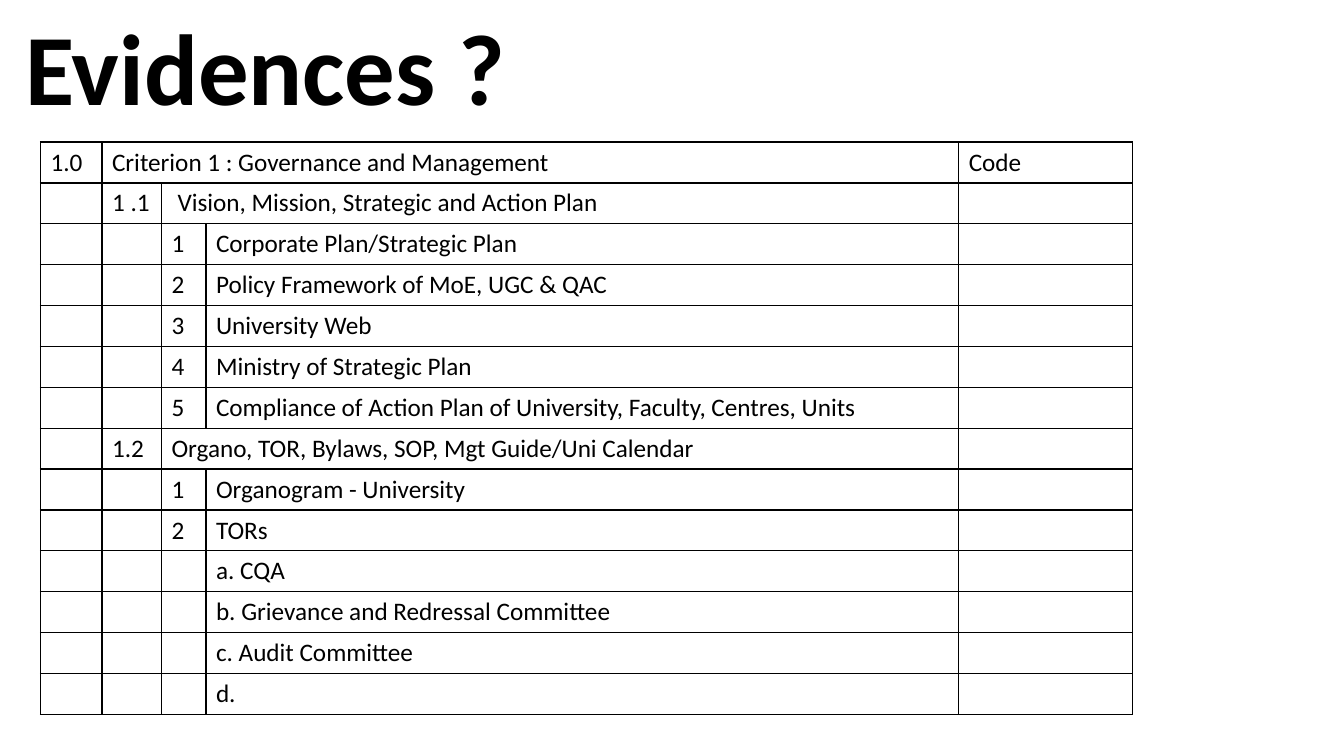
"""Build the evidences slide with its criterion table."""
from dataclasses import dataclass

from lxml import etree
from pptx import Presentation
from pptx.dml.color import RGBColor
from pptx.enum import text
from pptx.oxml import ns
from pptx.util import Cm, Pt


@dataclass(frozen=True)
class Theme:
    """Colours, fonts and type sizes of the slide."""
    ink: str = "000000"
    font: str = "Calibri"
    title: int = 72
    body: int = 18
    rule: int = 1


THEME = Theme()
COLUMNS = (1.55, 1.5, 1.12, 18.97, 4.37)
ROW_HEIGHT = 1.03
LAST_TEXT_COLUMN = 3
ROWS = (
    ("1.0", "Criterion 1 : Governance and Management", "", "", "Code"),
    ("", "1 .1", "Vision, Mission, Strategic and Action Plan"),
    ("", "", "1", "Corporate Plan/Strategic Plan"),
    ("", "", "2", "Policy Framework of MoE, UGC & QAC"),
    ("", "", "3", "University Web"),
    ("", "", "4", "Ministry of Strategic Plan"),
    ("", "", "5", "Compliance of Action Plan of University, Faculty, Centres, Units"),
    ("", "1.2", "Organo, TOR, Bylaws, SOP, Mgt Guide/Uni Calendar"),
    ("", "", "1", "Organogram - University"),
    ("", "", "2", "TORs"),
    ("", "", "", "a. CQA"),
    ("", "", "", "b. Grievance and Redressal Committee"),
    ("", "", "", "c. Audit Committee"),
    ("", "", "", "d."),
)
HEADINGS = {0: 1, 1: 2, 7: 2}
INDENTED_ROW = 1


def style_runs(p, size, bold=False):
    """Apply the theme's font and colour to a paragraph's runs."""
    for r in p.runs:
        r.font.name = THEME.font
        r.font.size = Pt(size)
        r.font.bold = bold
        r.font.color.rgb = RGBColor.from_string(THEME.ink)


def add_title(s, label):
    """Place the slide title in its placeholder."""
    sp = s.shapes.title
    sp.left, sp.top, sp.width, sp.height = Cm(0.38), Cm(0), Cm(17.17), Cm(3.33)
    tf = sp.text_frame
    tf.text = label
    tf.auto_size = text.MSO_AUTO_SIZE.NONE
    tf.vertical_anchor = text.MSO_ANCHOR.TOP
    p = tf.paragraphs[0]
    p.alignment = text.PP_ALIGN.LEFT
    style_runs(p, THEME.title, bold=True)


def rule_cell(cell):
    """Draw a thin line on all four sides of an unfilled cell."""
    tc_pr = cell._tc.get_or_add_tcPr()
    for side in ("lnL", "lnR", "lnT", "lnB"):
        ln = etree.SubElement(tc_pr, ns.qn(f"a:{side}"), w=str(Pt(THEME.rule)))
        fill = etree.SubElement(ln, ns.qn("a:solidFill"))
        etree.SubElement(fill, ns.qn("a:srgbClr"), val=THEME.ink)
    cell.fill.background()


def add_criteria(s):
    """Add the criterion table with its headings merged across."""
    frame = s.shapes.add_table(len(ROWS), len(COLUMNS), Cm(1.02), Cm(3.58),
                               Cm(sum(COLUMNS)), Cm(ROW_HEIGHT * len(ROWS)))
    table = frame.table
    table.first_row = table.horz_banding = False
    for column, width in zip(table.columns, COLUMNS):
        column.width = Cm(width)
    for row in table.rows:
        row.height = Cm(ROW_HEIGHT)
    for cell in table.iter_cells():
        rule_cell(cell)
    for i, labels in enumerate(ROWS):
        for j, label in enumerate(labels):
            if label:
                p = table.cell(i, j).text_frame.paragraphs[0]
                p.text = label
                style_runs(p, THEME.body)
    for i, j in HEADINGS.items():
        table.cell(i, j).merge(table.cell(i, LAST_TEXT_COLUMN))
    heading = table.cell(INDENTED_ROW, HEADINGS[INDENTED_ROW])
    p_pr = heading.text_frame.paragraphs[0]._p.get_or_add_pPr()
    p_pr.set("indent", str(Cm(0.15)))


def main():
    """Build and save the presentation."""
    prs = Presentation()
    prs.slide_width, prs.slide_height = Cm(33.87), Cm(19.05)
    s = prs.slides.add_slide(prs.slide_layouts[5])
    add_title(s, "Evidences ?")
    add_criteria(s)
    prs.save("out.pptx")


if __name__ == "__main__":
    main()
